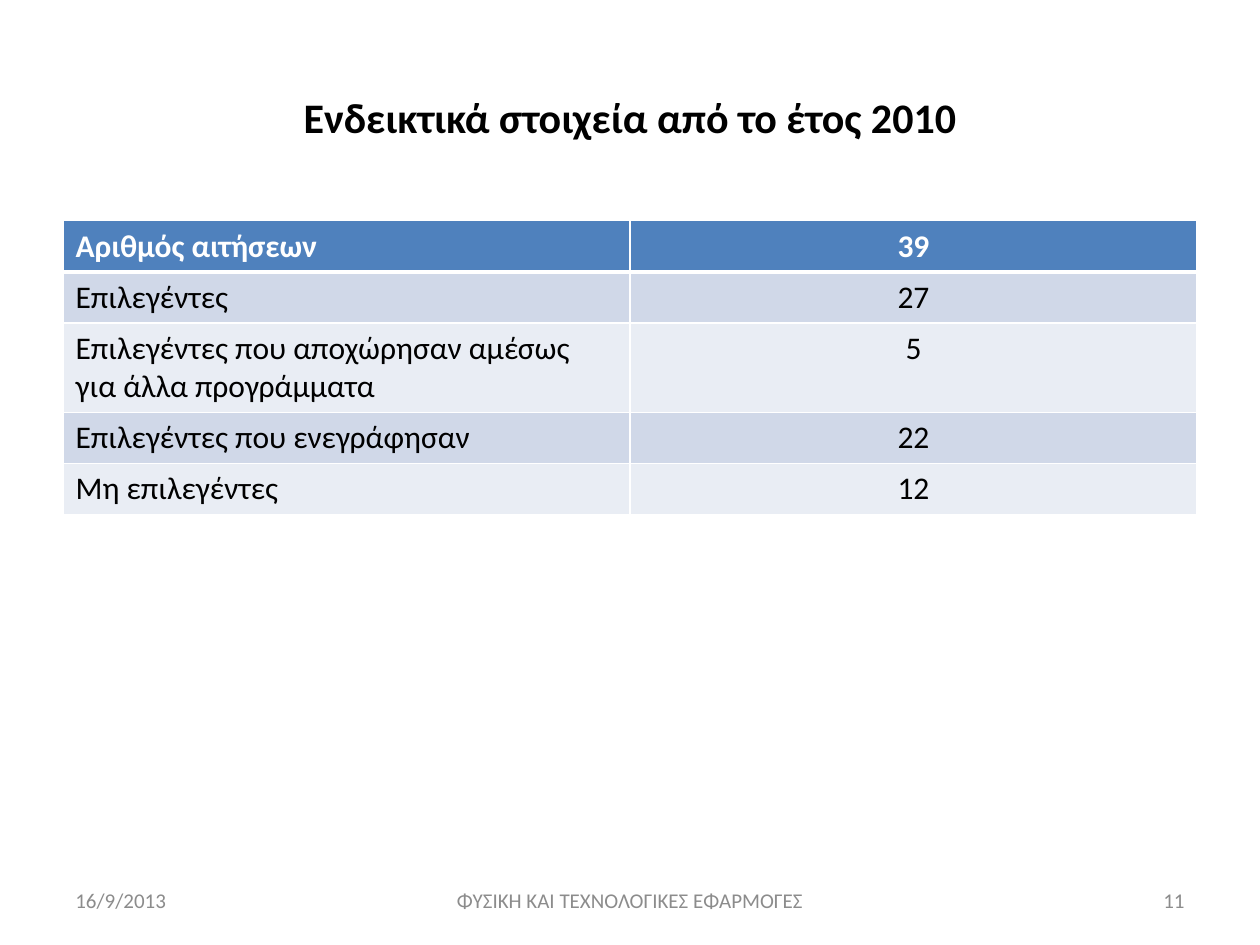
from dataclasses import dataclass

from lxml import etree
from pptx import Presentation
from pptx.dml.color import RGBColor
from pptx.enum.text import MSO_ANCHOR, PP_ALIGN
from pptx.oxml.ns import qn
from pptx.util import Cm, Pt

LEFT, CENTER, RIGHT = PP_ALIGN.LEFT, PP_ALIGN.CENTER, PP_ALIGN.RIGHT
MIDDLE = MSO_ANCHOR.MIDDLE

FONT = "Calibri"
WHITE, BLACK, GREY = "FFFFFF", "000000", "8C8C8C"
HEADER_FILL = "4F81BD"
BAND_FILLS = ("D0D8E8", "E9EDF4")

MARGIN = 1.27
CONTENT_WIDTH = 22.86
ROW_HEIGHT = 1.03
FOOTER_TOP, FOOTER_HEIGHT = 17.65, 1.01

ROWS = [
    ("Αριθμός αιτήσεων", "39"),
    ("Επιλεγέντες", "27"),
    ("Επιλεγέντες που αποχώρησαν αμέσως για άλλα προγράμματα", "5"),
    ("Επιλεγέντες που ενεγράφησαν", "22"),
    ("Μη επιλεγέντες", "12"),
]


@dataclass
class Label:
    """A line of text in a box; lengths in centimetres, size in points."""
    text: str
    left: float
    top: float
    width: float
    height: float
    align: PP_ALIGN
    size: int = 12
    color: str = GREY
    bold: bool = False


LABELS = [
    Label("Ενδεικτικά στοιχεία από το έτος 2010", MARGIN, 0.76, CONTENT_WIDTH, 3.18,
          CENTER, 24, BLACK, True),
    Label("16/9/2013", MARGIN, FOOTER_TOP, 5.93, FOOTER_HEIGHT, LEFT),
    Label("ΦΥΣΙΚΗ ΚΑΙ ΤΕΧΝΟΛΟΓΙΚΕΣ ΕΦΑΡΜΟΓΕΣ", 8.68, FOOTER_TOP, 8.04, FOOTER_HEIGHT, CENTER),
    Label("11", 18.2, FOOTER_TOP, 5.93, FOOTER_HEIGHT, RIGHT),
]


def rgb(value: str) -> RGBColor:
    return RGBColor.from_string(value)


def write(text_frame, text: str, align, size: int, color: str, bold: bool) -> None:
    paragraph = text_frame.paragraphs[0]
    paragraph.text = text
    paragraph.alignment = align
    font = paragraph.font
    font.name, font.size, font.bold = FONT, Pt(size), bold
    font.color.rgb = rgb(color)


def add_label(slide, label: Label) -> None:
    box = slide.shapes.add_textbox(Cm(label.left), Cm(label.top),
                                   Cm(label.width), Cm(label.height))
    box.text_frame.word_wrap = True
    box.text_frame.vertical_anchor = MIDDLE
    write(box.text_frame, label.text, label.align, label.size, label.color, label.bold)


def set_borders(cell, top: float, bottom: float) -> None:
    """Draw white cell borders; the line elements must precede the fill."""
    properties = cell._tc.get_or_add_tcPr()
    widths = {"a:lnL": 1, "a:lnR": 1, "a:lnT": top, "a:lnB": bottom}
    for position, (tag, width) in enumerate(widths.items()):
        line = etree.Element(qn(tag), w=str(Pt(width)))
        fill = etree.SubElement(line, qn("a:solidFill"))
        etree.SubElement(fill, qn("a:srgbClr"), val=WHITE)
        properties.insert(position, line)


def add_results_table(slide) -> None:
    table = slide.shapes.add_table(len(ROWS), 2, Cm(MARGIN), Cm(4.45), Cm(CONTENT_WIDTH),
                                   Cm(ROW_HEIGHT * len(ROWS))).table
    for row_index, values in enumerate(ROWS):
        header = row_index == 0
        table.rows[row_index].height = Cm(ROW_HEIGHT)
        for column_index, (text, align) in enumerate(zip(values, (LEFT, CENTER))):
            cell = table.cell(row_index, column_index)
            cell.fill.solid()
            cell.fill.fore_color.rgb = rgb(
                HEADER_FILL if header else BAND_FILLS[(row_index - 1) % 2])
            write(cell.text_frame, text, align, 18, WHITE if header else BLACK, header)
            set_borders(cell, top=3 if row_index == 1 else 1, bottom=3 if header else 1)


def main() -> None:
    presentation = Presentation()
    presentation.slide_width, presentation.slide_height = Cm(25.4), Cm(19.05)
    slide = presentation.slides.add_slide(presentation.slide_layouts[6])
    add_results_table(slide)
    for label in LABELS:
        add_label(slide, label)
    presentation.save("out.pptx")


if __name__ == "__main__":
    main()
